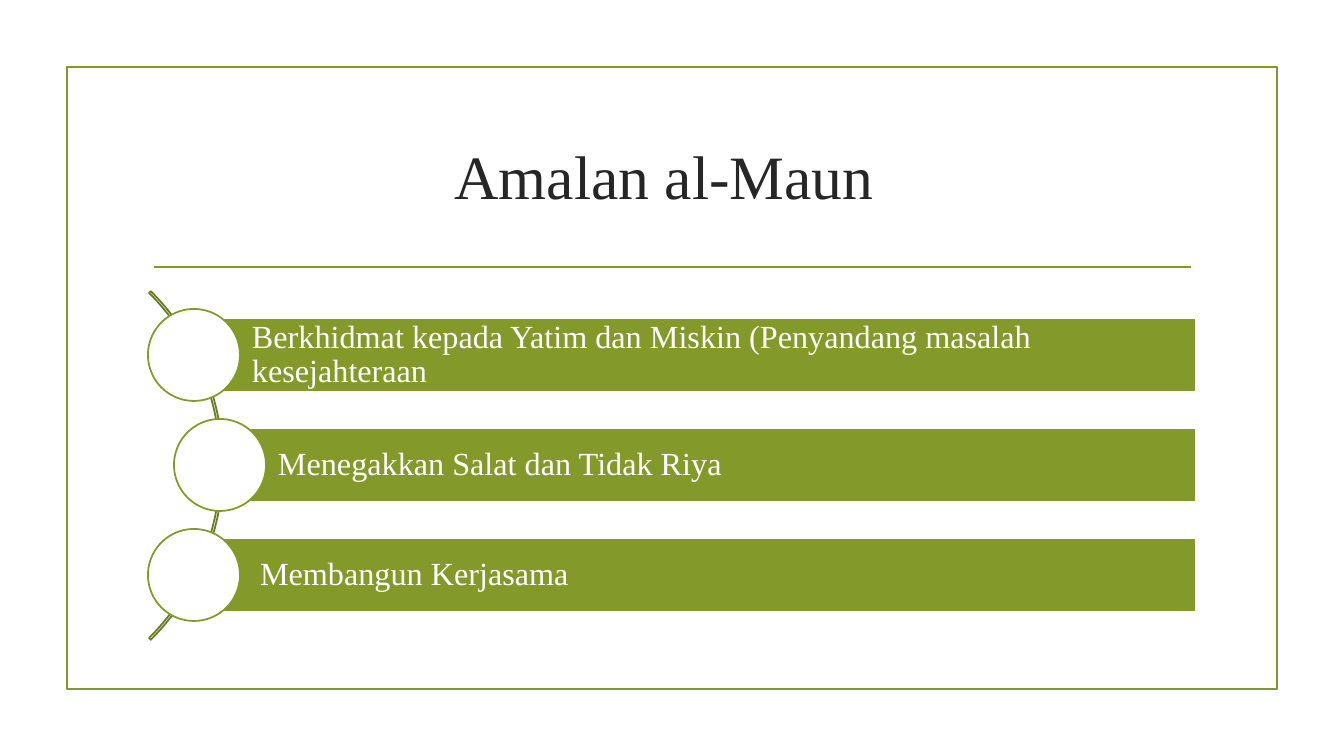
from dataclasses import dataclass

from pptx import Presentation
from pptx.dml.color import RGBColor
from pptx.enum.shapes import MSO_CONNECTOR, MSO_SHAPE
from pptx.enum.text import MSO_ANCHOR, PP_ALIGN
from pptx.oxml.ns import qn
from pptx.util import Emu, Pt

RECT, OVAL, ARC = MSO_SHAPE.RECTANGLE, MSO_SHAPE.OVAL, MSO_SHAPE.BLOCK_ARC
STRAIGHT = MSO_CONNECTOR.STRAIGHT
MIDDLE = MSO_ANCHOR.MIDDLE
LEFT, CENTER = PP_ALIGN.LEFT, PP_ALIGN.CENTER


@dataclass(frozen=True)
class Theme:
    font: str = "Times New Roman"
    green: RGBColor = RGBColor(0x83, 0x99, 0x2A)
    dark_green: RGBColor = RGBColor(0x69, 0x7B, 0x22)
    ink: RGBColor = RGBColor(0x26, 0x26, 0x26)
    white: RGBColor = RGBColor(0xFF, 0xFF, 0xFF)
    title_size: int = 44
    item_size: int = 23
    line_width: float = 1.25


THEME = Theme()

# Each item: text and the x of its circle's centre
ITEMS = [
    ("Berkhidmat kepada Yatim dan Miskin (Penyandang masalah kesejahteraan", 194),
    ("Menegakkan Salat dan Tidak Riya", 220),
    (" Membangun Kerjasama", 194),
]
FIRST_CENTER, ROW_STEP = 355, 110
BAR_RIGHT, BAR_HEIGHT, CIRCLE = 1196, 73, 92


def px(n):
    return Emu(round(n * 914400 / 100.8))


def add_outline(slide, kind, box, line, fill=None):
    sp = slide.shapes.add_shape(kind, *map(px, box))
    sp.shadow.inherit = False
    if fill is None:
        sp.fill.background()
    else:
        sp.fill.solid()
        sp.fill.fore_color.rgb = fill
    sp.line.color.rgb = line
    sp.line.width = Pt(THEME.line_width)
    return sp


def set_text(sp, text, size, color, align, insets):
    tf = sp.text_frame
    tf.word_wrap = True
    tf.vertical_anchor = MIDDLE
    tf.margin_left, tf.margin_top, tf.margin_right, tf.margin_bottom = map(px, insets)
    p = tf.paragraphs[0]
    p.text = text
    p.alignment = align
    p.line_spacing = 0.9
    font = p.runs[0].font
    font.name = THEME.font
    font.size = Pt(size)
    font.color.rgb = color


def add_rule(slide, left, right, y):
    ln = slide.shapes.add_connector(STRAIGHT, px(left), px(y), px(right), px(y))
    ln.line.color.rgb = THEME.green
    ln.line.width = Pt(THEME.line_width)
    sp_pr = ln._element.spPr
    sp_pr.append(sp_pr.makeelement(qn("a:effectLst"), {}))


def add_title(slide, text):
    tb = slide.shapes.add_textbox(px(143), px(108), px(1058), px(144))
    set_text(tb, text, THEME.title_size, THEME.ink, CENTER, (10, 5, 10, 5))


def add_arc(slide):
    sp = add_outline(slide, ARC, (-270, 219, 493, 493), THEME.dark_green)
    for i, value in enumerate((189, 27, 0.005)):
        sp.adjustments[i] = value


def add_item(slide, text, cx, cy):
    bar = add_outline(slide, RECT, (cx, cy - BAR_HEIGHT / 2, BAR_RIGHT - cx, BAR_HEIGHT),
                      THEME.white, THEME.green)
    set_text(bar, text, THEME.item_size, THEME.white, LEFT, (58, 6, 6, 6))
    add_outline(slide, OVAL, (cx - CIRCLE / 2, cy - CIRCLE / 2, CIRCLE, CIRCLE),
                THEME.green, THEME.white)


def main():
    prs = Presentation()
    prs.slide_width, prs.slide_height = px(1344), px(756)
    slide = prs.slides.add_slide(prs.slide_layouts[6])

    # Frame and heading
    add_outline(slide, RECT, (67, 67, 1210, 622), THEME.green)
    add_rule(slide, 154, 1191, 267)
    add_title(slide, "Amalan al-Maun ")

    # Curved list
    add_arc(slide)
    for i, (text, cx) in enumerate(ITEMS):
        add_item(slide, text, cx, FIRST_CENTER + i * ROW_STEP)

    prs.save("out.pptx")


if __name__ == "__main__":
    main()
